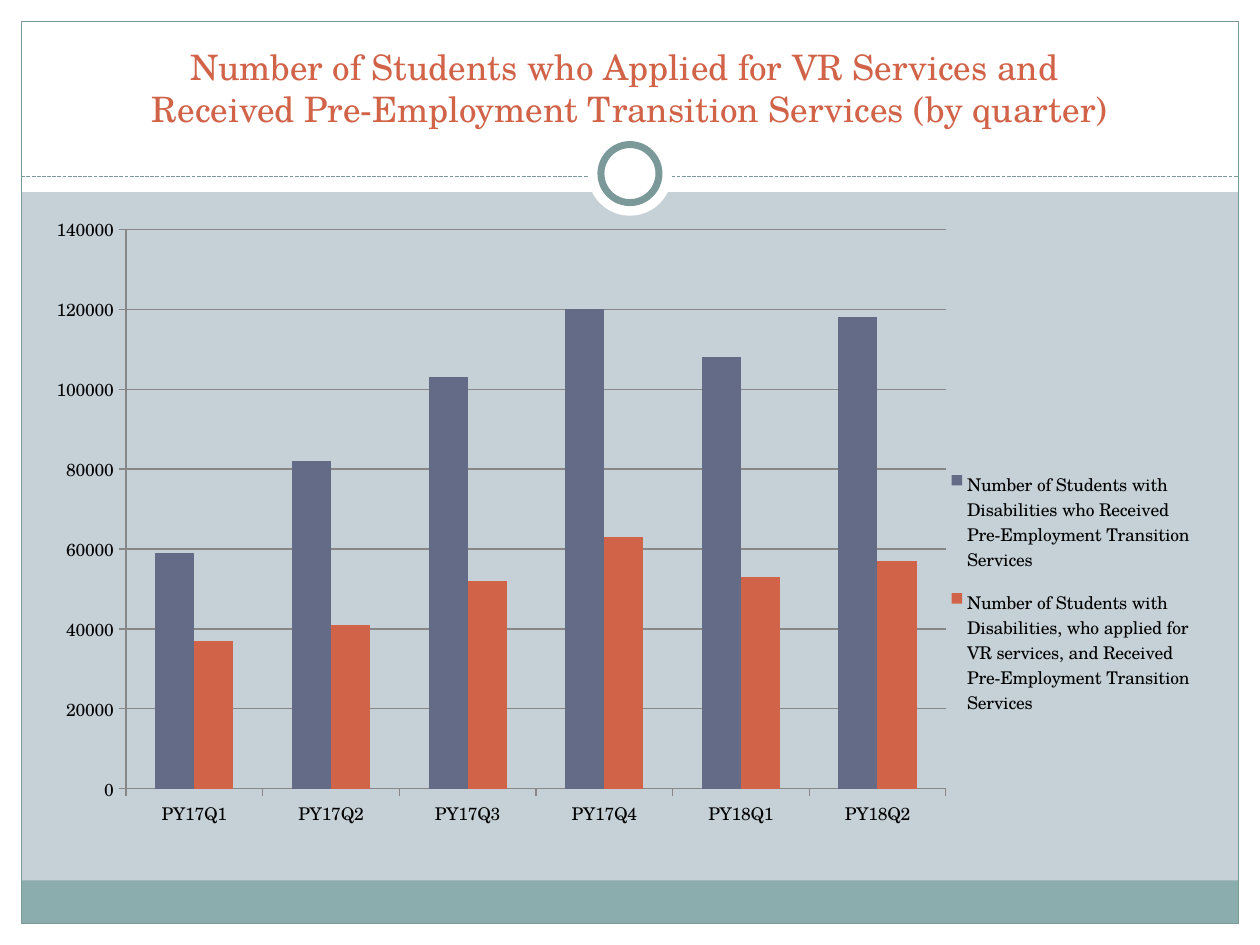
import pptx
import pptx.chart.data
import pptx.dml.color
import pptx.enum.chart
import pptx.enum.dml
import pptx.enum.shapes
import pptx.enum.text
import pptx.oxml
import pptx.oxml.ns
import pptx.util
from pptx.dml.color import RGBColor
from pptx.util import Cm, Pt

WHITE = RGBColor(0xFF, 0xFF, 0xFF)
BLACK = RGBColor(0x00, 0x00, 0x00)
MIST = RGBColor(0xC5, 0xD1, 0xD7)
TEAL = RGBColor(0x8C, 0xAD, 0xAE)
DARK_TEAL = RGBColor(0x7C, 0x99, 0x9A)
SLATE = RGBColor(0x64, 0x6B, 0x86)
RUST = RGBColor(0xD1, 0x63, 0x49)
GREY = RGBColor(0x87, 0x87, 0x87)
FONT = "TeX Gyre Schola"
WIDTH, HEIGHT, MARGIN = 25.4, 19.05, 0.43
RECT = pptx.enum.shapes.MSO_SHAPE.RECTANGLE
OVAL = pptx.enum.shapes.MSO_SHAPE.OVAL

deck = pptx.Presentation()
deck.slide_width = Cm(WIDTH)
deck.slide_height = Cm(HEIGHT)
page = deck.slides.add_slide(deck.slide_layouts[6])
page.background.fill.solid()
page.background.fill.fore_color.rgb = MIST


def add_panel(kind, left, top, width, height, fill=None, line_width=None):
    panel = page.shapes.add_shape(kind, Cm(left), Cm(top), Cm(width), Cm(height))
    panel.shadow.inherit = False
    if fill is None:
        panel.fill.background()
    else:
        panel.fill.solid()
        panel.fill.fore_color.rgb = fill
    if line_width is None:
        panel.line.fill.background()
    else:
        panel.line.color.rgb = DARK_TEAL
        panel.line.width = Pt(line_width)


def make_layout(**settings):
    return pptx.oxml.parse_xml(
        "<c:layout %s><c:manualLayout>%s</c:manualLayout></c:layout>" % (
            pptx.oxml.ns.nsdecls("c"),
            "".join('<c:%s val="%s"/>' % setting for setting in settings.items())))


add_panel(RECT, 0, HEIGHT - MARGIN, WIDTH, MARGIN, WHITE)
add_panel(RECT, 0, 0, WIDTH, 3.87, WHITE)
for left in (0, WIDTH - MARGIN):
    add_panel(RECT, left, 0, MARGIN, HEIGHT, WHITE)
add_panel(RECT, MARGIN, 17.75, WIDTH - 2 * MARGIN, 0.87, TEAL)
add_panel(RECT, MARGIN, MARGIN, WIDTH - 2 * MARGIN, HEIGHT - 2 * MARGIN, line_width=0.75)

divider = page.shapes.add_connector(
    pptx.enum.shapes.MSO_CONNECTOR.STRAIGHT, Cm(MARGIN), Cm(3.56), Cm(WIDTH - MARGIN), Cm(3.56))
divider.line.color.rgb = DARK_TEAL
divider.line.width = Pt(0.75)
divider.line.dash_style = pptx.enum.dml.MSO_LINE.SQUARE_DOT
divider._element.spPr.append(pptx.oxml.parse_xml(
    "<a:effectLst %s/>" % pptx.oxml.ns.nsdecls("a")))

for size, fill, line_width in ((1.7, WHITE, None), (1.17, WHITE, 4)):
    add_panel(OVAL, (WIDTH - size) / 2, 3.5 - size / 2, size, size, fill, line_width)

title = page.shapes.add_textbox(Cm(0.85), Cm(0.62), Cm(23.7), Cm(2.11))
frame = title.text_frame
frame.word_wrap = True
frame.vertical_anchor = pptx.enum.text.MSO_ANCHOR.BOTTOM
frame.text = ("Number of Students who Applied for VR Services and \v"
              "Received Pre-Employment Transition Services (by quarter)")
para = frame.paragraphs[0]
para.alignment = pptx.enum.text.PP_ALIGN.CENTER
for span in para.runs:
    span.font.name = FONT
    span.font.size = Pt(20)
    span.font.color.rgb = RUST

data = pptx.chart.data.CategoryChartData()
data.categories = ["PY17Q1", "PY17Q2", "PY17Q3", "PY17Q4", "PY18Q1", "PY18Q2"]
data.add_series(
    "Number of Students with Disabilities who Received Pre-Employment Transition Services",
    (59000, 82000, 103000, 120000, 108000, 118000))
data.add_series(
    "Number of Students with Disabilities, who applied for VR services, "
    "and Received Pre-Employment Transition Services",
    (37000, 41000, 52000, 63000, 53000, 57000))
chart = page.shapes.add_chart(
    pptx.enum.chart.XL_CHART_TYPE.COLUMN_CLUSTERED,
    Cm(0.91), Cm(4.25), Cm(23.28), Cm(12.53), data).chart
chart.has_title = False
chart.font.name = FONT
chart.font.size = Pt(10)
chart.font.color.rgb = BLACK
chart.has_legend = True
chart.legend.position = pptx.enum.chart.XL_LEGEND_POSITION.RIGHT
chart.legend.include_in_layout = False

plot = chart.plots[0]
plot.gap_width = 150
plot.overlap = 0
plot.vary_by_categories = False
for series, color in zip(plot.series, (SLATE, RUST)):
    series.format.fill.solid()
    series.format.fill.fore_color.rgb = color
    series.invert_if_negative = False

value_axis = chart.value_axis
value_axis.minimum_scale = 0
value_axis.maximum_scale = 140000
value_axis.major_unit = 20000
value_axis.has_major_gridlines = True
for axis in (chart.category_axis, value_axis):
    axis.major_tick_mark = pptx.enum.chart.XL_TICK_MARK.OUTSIDE
for part in (chart.category_axis, value_axis, value_axis.major_gridlines):
    part.format.line.color.rgb = GREY
    part.format.line.width = Pt(0.75)

plot_area = chart._chartSpace.chart.plotArea
legend = chart.legend._element
for holder in (plot_area, legend):
    for old_layout in holder.findall(pptx.oxml.ns.qn("c:layout")):
        holder.remove(old_layout)
plot_area.insert(0, make_layout(
    layoutTarget="inner", xMode="edge", yMode="edge", x=0.07, y=0.03, w=0.71, h=0.9))
legend.find(pptx.oxml.ns.qn("c:legendPos")).addnext(make_layout(
    xMode="edge", yMode="edge", x=0.79, y=0.39, w=0.21, h=0.45))

deck.save("out.pptx")
